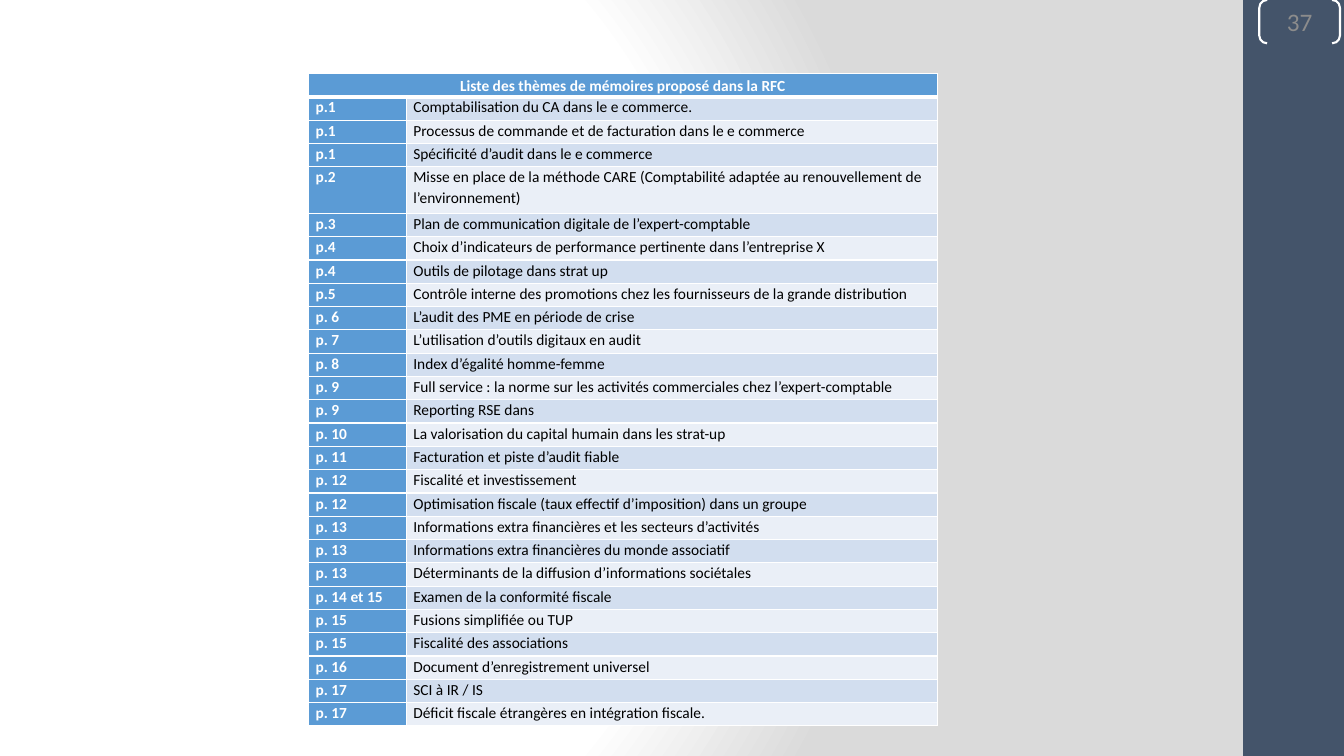
from dataclasses import dataclass

import pptx
import pptx.dml.color
import pptx.enum.shapes
import pptx.enum.text
import pptx.oxml
import pptx.oxml.ns
import pptx.util
from lxml import etree

Inches = pptx.util.Inches
Pt = pptx.util.Pt
ShapeKind = pptx.enum.shapes.MSO_SHAPE
Align = pptx.enum.text.PP_ALIGN
Anchor = pptx.enum.text.MSO_ANCHOR


@dataclass(frozen=True)
class Theme:
    font: str = "Calibri"
    white: str = "FFFFFF"
    black: str = "000000"
    backdrop: str = "DADADA"
    sidebar: str = "44546A"
    number: str = "8C8C8C"
    accent: str = "5B9BD5"
    bands: tuple = ("EAEFF7", "D2DEEF")
    table_size: float = 11
    number_size: float = 18
    thin: float = 1
    thick: float = 3


THEME = Theme()

TITLE = "Liste des thèmes de mémoires proposé dans la RFC"
TOPICS = [
    ("p.1", "Comptabilisation du CA dans le e commerce."),
    ("p.1", "Processus de commande et de facturation dans le e commerce"),
    ("p.1", "Spécificité d’audit dans le e commerce"),
    ("p.2", "Misse en place de la méthode CARE (Comptabilité adaptée au "
            "renouvellement de l’environnement)"),
    ("p.3", "Plan de communication digitale de l’expert-comptable"),
    ("p.4", "Choix d’indicateurs de performance pertinente dans l’entreprise X"),
    ("p.4", "Outils de pilotage dans strat up"),
    ("p.5", "Contrôle interne des promotions chez les fournisseurs de la grande distribution"),
    ("p. 6", "L’audit des PME en période de crise"),
    ("p. 7", "L’utilisation d’outils digitaux en audit"),
    ("p. 8", "Index d’égalité homme-femme"),
    ("p. 9", "Full service : la norme sur les activités commerciales chez l’expert-comptable"),
    ("p. 9", "Reporting RSE dans"),
    ("p. 10", "La valorisation du capital humain dans les strat-up"),
    ("p. 11", "Facturation et piste d’audit fiable"),
    ("p. 12", "Fiscalité et investissement"),
    ("p. 12", "Optimisation fiscale (taux effectif d’imposition) dans un groupe"),
    ("p. 13", "Informations extra financières et les secteurs d’activités"),
    ("p. 13", "Informations extra financières du monde associatif"),
    ("p. 13", "Déterminants de la diffusion d’informations sociétales"),
    ("p. 14 et 15", "Examen de la conformité fiscale"),
    ("p. 15", "Fusions simplifiée ou TUP"),
    ("p. 15", "Fiscalité des associations"),
    ("p. 16", "Document d’enregistrement universel"),
    ("p. 17", "SCI à IR / IS"),
    ("p. 17", "Déficit fiscale étrangères en intégration fiscale."),
]
TWO_LINE_ROW = 4


def color(value):
    return pptx.dml.color.RGBColor.from_string(value)


def style_text(frame, size, ink, bold=False, align=Align.LEFT):
    para = frame.paragraphs[0]
    para.alignment = align
    for span in para.runs:
        span.font.name = THEME.font
        span.font.size = Pt(size)
        span.font.bold = bold
        span.font.color.rgb = color(ink)
    return para


def paint_background(page):
    """Fill the page with a radial gradient from white to grey."""
    page.background.fill.solid()
    properties = page.element.xpath(".//p:bgPr")[0]
    stops = "".join(
        f'<a:gs pos="{position * 1000}"><a:srgbClr val="{value}"/></a:gs>'
        for position, value in ((0, THEME.white), (75, THEME.white), (100, THEME.backdrop)))
    gradient = pptx.oxml.parse_xml(
        f'<a:gradFill {pptx.oxml.ns.nsdecls("a")} rotWithShape="1">'
        f'<a:gsLst>{stops}</a:gsLst><a:path path="circle">'
        '<a:fillToRect l="20000" t="50000" r="100000" b="50000"/></a:path></a:gradFill>')
    properties.replace(properties[0], gradient)


def add_sidebar(page, left, top, width, height):
    """Draw the dark strip with the bracketed page number at its top."""
    strip = page.shapes.add_shape(ShapeKind.RECTANGLE, left, top, width, height)
    strip.shadow.inherit = False
    strip.fill.solid()
    strip.fill.fore_color.rgb = color(THEME.sidebar)
    strip.line.fill.background()

    bracket = page.shapes.add_shape(
        ShapeKind.DOUBLE_BRACKET, left + Inches(0.16), top, Inches(0.8), Inches(0.43))
    bracket.adjustments[0] = 0.18
    bracket.shadow.inherit = False
    bracket.fill.background()
    bracket.line.color.rgb = color(THEME.white)
    bracket.line.width = Pt(1.5)
    frame = bracket.text_frame
    frame.margin_left = frame.margin_right = frame.margin_top = frame.margin_bottom = 0
    frame.vertical_anchor = Anchor.MIDDLE
    frame.text = "37"
    style_text(frame, THEME.number_size, THEME.number, align=Align.CENTER)


def set_borders(cell, top, bottom):
    properties = cell._tc.get_or_add_tcPr()
    widths = {"lnL": THEME.thin, "lnR": THEME.thin, "lnT": top, "lnB": bottom}
    for tag, width in widths.items():
        line = etree.SubElement(properties, pptx.oxml.ns.qn(f"a:{tag}"), w=str(Pt(width)))
        fill = etree.SubElement(line, pptx.oxml.ns.qn("a:solidFill"))
        etree.SubElement(fill, pptx.oxml.ns.qn("a:srgbClr"), val=THEME.white)


def fill_cell(cell, text, fill, ink, bold, align=Align.LEFT, top=THEME.thin, bottom=THEME.thin):
    set_borders(cell, top, bottom)
    cell.fill.solid()
    cell.fill.fore_color.rgb = color(fill)
    cell.margin_left = cell.margin_right = Inches(0.07)
    cell.margin_top = cell.margin_bottom = 0
    cell.text_frame.text = text
    para = style_text(cell.text_frame, THEME.table_size, ink, bold, align)
    para.line_spacing = 1.07


def add_topic_table(page, left, top, width, height):
    row_count = len(TOPICS) + 1
    table = page.shapes.add_table(row_count, 2, left, top, width, height).table
    table.columns[0].width = Inches(0.97)
    table.columns[1].width = width - Inches(0.97)
    for index, row in enumerate(table.rows):
        lines = 2 if index == TWO_LINE_ROW else 1
        row.height = int(height * lines / (row_count + 1))

    heading = table.cell(0, 0)
    heading.merge(table.cell(0, 1))
    for cell, text in zip(table.rows[0].cells, (TITLE, "")):
        fill_cell(cell, text, THEME.accent, THEME.white, True, Align.CENTER, bottom=THEME.thick)
    heading.vertical_anchor = Anchor.MIDDLE

    for index, (reference, topic) in enumerate(TOPICS, start=1):
        upper = THEME.thick if index == 1 else THEME.thin
        fill_cell(table.cell(index, 0), reference, THEME.accent, THEME.white, True, top=upper)
        fill_cell(table.cell(index, 1), topic, THEME.bands[index % 2], THEME.black, False, top=upper)


def main():
    deck = pptx.Presentation()
    deck.slide_width, deck.slide_height = Inches(13.33), Inches(7.5)
    page = deck.slides.add_slide(deck.slide_layouts[6])
    paint_background(page)
    add_sidebar(page, Inches(12.33), 0, Inches(1), deck.slide_height)
    add_topic_table(page, Inches(3.06), Inches(0.73), Inches(6.24), Inches(6.48))
    deck.save("out.pptx")


if __name__ == "__main__":
    main()
